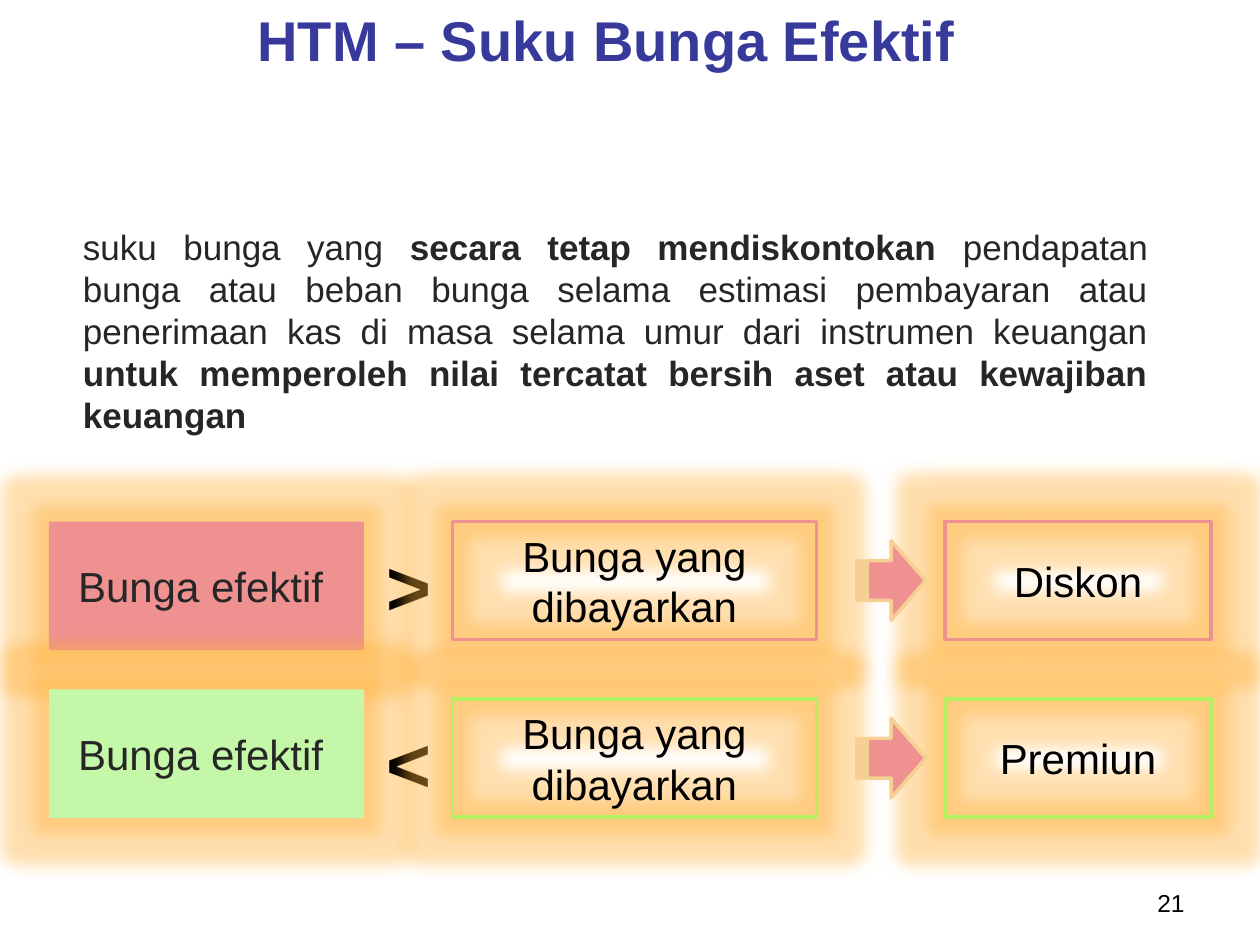
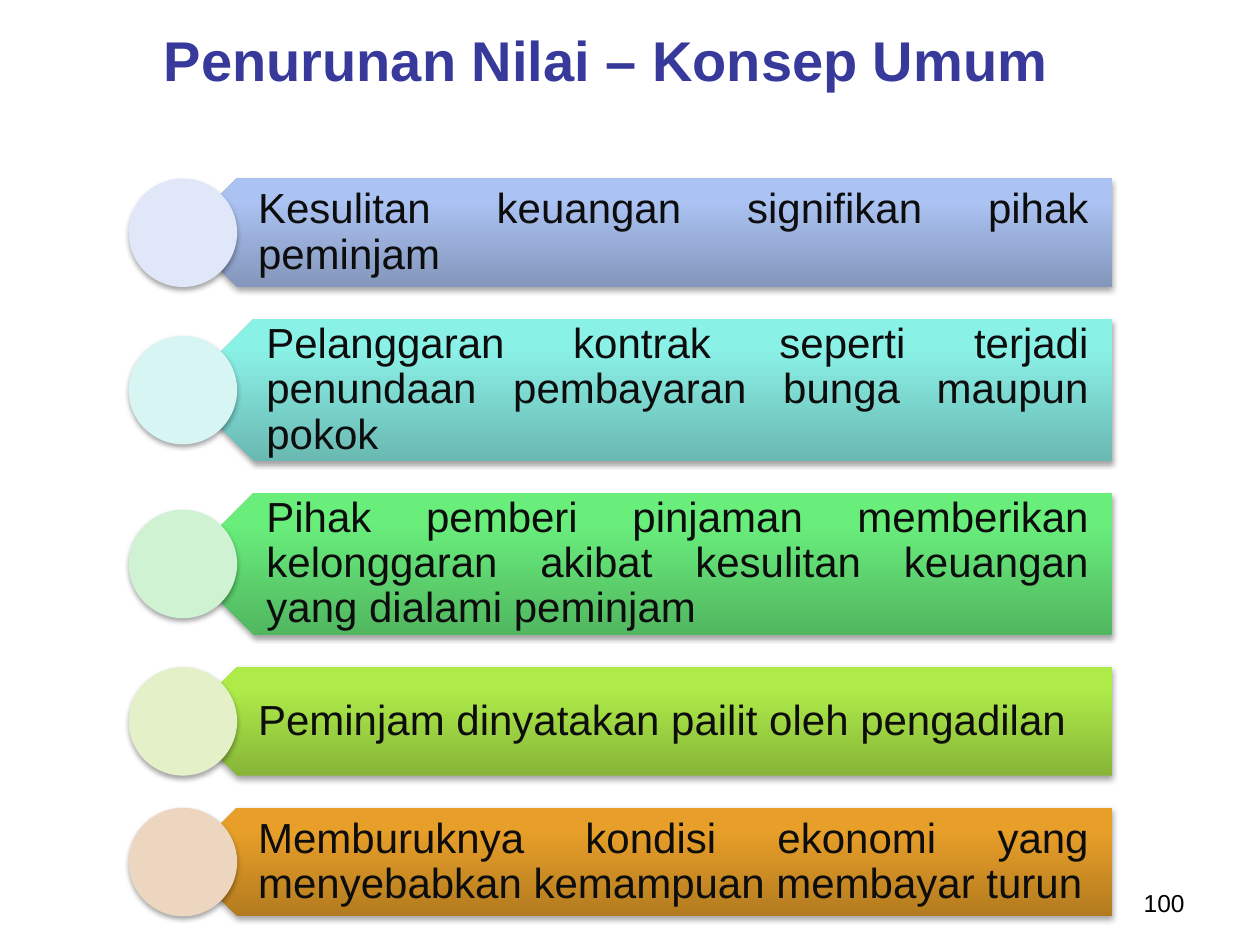
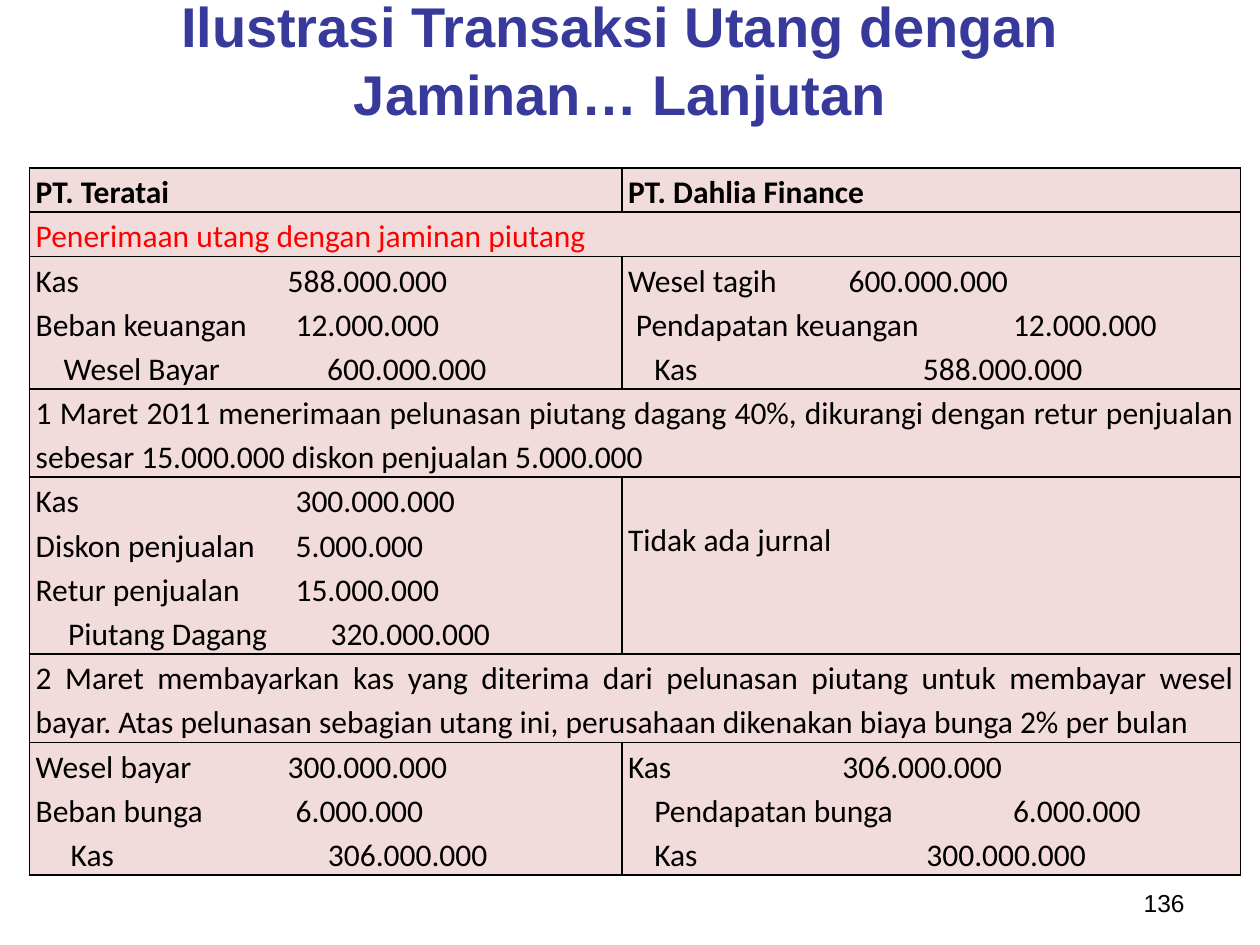
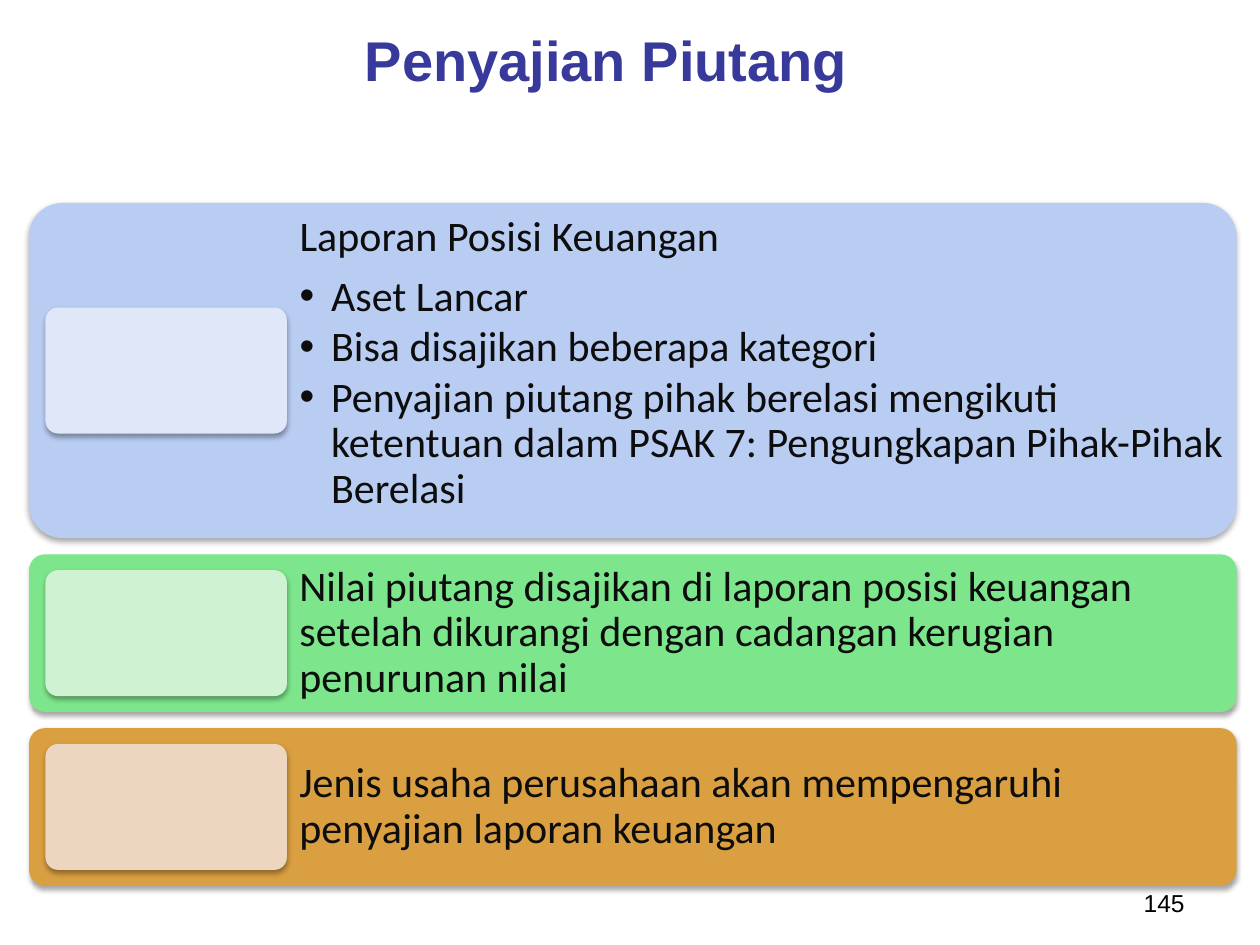
from lxml import etree
from pptx import Presentation
from pptx.dml.color import RGBColor
from pptx.enum import shapes, text
from pptx.oxml import ns
from pptx.util import Pt

INK, SOFT_INK, DARK = "000000", "262626", "0D0D0D"
TITLE_BLUE, ALERT_RED = "37399B", "FF0000"
ROSE, SAND, CELL_PINK, GLOW = "EF9191", "F5D092", "F2DBDB", "FFB139"
CENTER, RIGHT, JUSTIFY = text.PP_ALIGN.CENTER, text.PP_ALIGN.RIGHT, text.PP_ALIGN.JUSTIFY
MIDDLE = text.MSO_ANCHOR.MIDDLE
PRESET = shapes.MSO_SHAPE

DEFINITION = [
    ("suku bunga yang ", False),
    ("secara tetap mendiskontokan ", True),
    ("pendapatan bunga atau beban bunga selama estimasi pembayaran atau "
     "penerimaan kas di masa selama umur dari instrumen keuangan ", False),
    ("untuk memperoleh nilai tercatat bersih aset atau kewajiban keuangan", True),
]
COMPARISONS = [
    dict(sign=">", result="Diskon", fill=ROSE, line=ROSE, effective_top=298, paid_top=298),
    dict(sign="<", result="Premiun", fill="C4F7A7", line="B3F062", effective_top=394, paid_top=399.5),
]

INDICATORS = [
    ("Kesulitan keuangan signifikan pihak peminjam", 62, "8496BB", "ABC3F3", "E0E7F9"),
    ("Pelanggaran kontrak seperti terjadi penundaan pembayaran bunga maupun pokok",
     81, "6AB9B2", "8AF1E7", "D7F6F3"),
    ("Pihak pemberi pinjaman memberikan kelonggaran akibat kesulitan keuangan "
     "yang dialami peminjam", 81, "51B760", "69EE7C", "CFF3D2"),
    ("Peminjam dinyatakan pailit oleh pengadilan", 62, "86B538", "AEEB49", "E4F0C7"),
    ("Memburuknya kondisi ekonomi yang menyebabkan kemampuan membayar turun",
     62, "B37B1F", "E89F29", "EDD6C0"),
]

JOURNAL = [
    (1, ["PT. Teratai"], ["PT. Dahlia Finance"]),
    (1, ["Penerimaan utang dengan jaminan piutang"], None),
    (3,
     [("Kas\t588.000.000", 144),
      ("Beban keuangan\t12.000.000", 148.5),
      ("\tWesel Bayar\t600.000.000", 16, 166.5)],
     [("Wesel tagih\t600.000.000", 126),
      ("\tPendapatan keuangan\t12.000.000", 4.5, 220),
      ("\tKas\t588.000.000", 15, 168.5)]),
    (2, ["1 Maret 2011 menerimaan pelunasan piutang dagang 40%, dikurangi dengan retur "
         "penjualan sebesar 15.000.000 diskon penjualan 5.000.000"], None),
    (4,
     [("Kas\t300.000.000", 148.5),
      ("Diskon penjualan\t5.000.000", 148.5),
      ("Retur penjualan\t15.000.000", 148.5),
      ("\tPiutang Dagang\t320.000.000", 18.5, 168.5)],
     ["Tidak ada jurnal"]),
    (2, ["2 Maret membayarkan kas yang diterima dari pelunasan piutang untuk membayar wesel "
         "bayar. Atas pelunasan sebagian utang ini, perusahaan dikenakan biaya bunga 2% per bulan"],
     None),
    (3,
     [("Wesel bayar\t300.000.000", 144),
      ("Beban bunga\t6.000.000", 148.5),
      ("\tKas\t306.000.000", 20, 167)],
     [("Kas\t306.000.000", 122.5),
      ("\tPendapatan bunga\t6.000.000", 15, 220),
      ("\tKas\t300.000.000", 15, 170.5)]),
]

PRESENTATION = [
    (["Laporan Posisi Keuangan", "Aset Lancar", "Bisa disajikan beberapa kategori",
      "Penyajian piutang pihak berelasi mengikuti ketentuan dalam PSAK 7: "
      "Pengungkapan Pihak-Pihak Berelasi"], 191.5, "B9CCF2", "E0E7F9"),
    (["Nilai piutang disajikan di laporan posisi keuangan setelah dikurangi dengan "
      "cadangan kerugian penurunan nilai"], 90, "7DE68C", "CFF3D2"),
    (["Jenis usaha perusahaan akan mempengaruhi penyajian laporan keuangan"],
     90, "D99F41", "EDD6C0"),
]


def rgb(value):
    return RGBColor.from_string(value)


def child(parent, tag, **attributes):
    element = etree.SubElement(parent, ns.qn("a:" + tag))
    for name, value in attributes.items():
        element.set(name, str(value))
    return element


def write(frame, paragraphs, font="Arial", size=24, color=INK, bold=False, align=None,
          anchor=None, insets=None, spacing=None, bulleted=False):
    frame.word_wrap = True
    if anchor is not None:
        frame.vertical_anchor = anchor
    if insets:
        frame.margin_left, frame.margin_top, frame.margin_right, frame.margin_bottom = map(Pt, insets)
    if isinstance(paragraphs, str):
        paragraphs = [paragraphs]
    for index, content in enumerate(paragraphs):
        paragraph = frame.paragraphs[0] if index == 0 else frame.add_paragraph()
        stops = ()
        if isinstance(content, tuple):
            content, *stops = content
        properties = paragraph._p.get_or_add_pPr()
        if bulleted:
            properties.set("marL", str(Pt(18) if index else 0))
            properties.set("indent", str(-Pt(18) if index else 0))
            if index:
                child(properties, "buFont", typeface="Arial")
                child(properties, "buChar", char="•")
            else:
                child(properties, "buNone")
            paragraph.space_before = Pt(0)
            paragraph.space_after = Pt(3 if index else 8)
        if stops:
            tabs = child(properties, "tabLst")
            for stop in stops:
                child(tabs, "tab", pos=Pt(stop), algn="l")
        paragraph.alignment = align
        if spacing:
            paragraph.line_spacing = spacing
        runs = content if isinstance(content, list) else [(content, bold)]
        for words, strong in runs:
            run = paragraph.add_run()
            run.text = words
            run.font.name, run.font.size, run.font.bold = font, Pt(size), strong
            run.font.color.rgb = rgb(color)


def place(part, box):
    part.left, part.top, part.width, part.height = map(Pt, box)


def label(slide, box, words, **style):
    frame = slide.shapes.add_textbox(*map(Pt, box)).text_frame
    write(frame, words, **style)


def draw(slide, preset, box, fill=None, line=None, effect=None):
    shape = slide.shapes.add_shape(preset, *map(Pt, box))
    shape.shadow.inherit = False
    if fill:
        shape.fill.solid()
        shape.fill.fore_color.rgb = rgb(fill)
    else:
        shape.fill.background()
    if line:
        shape.line.color.rgb, shape.line.width = rgb(line), Pt(2)
    else:
        shape.line.fill.background()
    if effect:
        effects = shape._element.spPr.find(ns.qn("a:effectLst"))
        if effect == "glow":
            halo, tint, alpha = child(effects, "glow", rad=Pt(18)), GLOW, 40
        else:
            halo, tint, alpha = child(effects, "outerShdw", blurRad=Pt(3.1), dist=Pt(1.8),
                                      dir=5400000, rotWithShape=0), INK, 35
        child(child(halo, "srgbClr", val=tint), "alpha", val=alpha * 1000)
    return shape


def start_slide(deck, heading, number, layout=5, top=11.5, width=648):
    slide = deck.slides.add_slide(deck.slide_layouts[layout])
    title = slide.shapes.title
    place(title, (22.5, top, width, 44.5))
    title.text_frame.auto_size = text.MSO_AUTO_SIZE.NONE
    write(title.text_frame, heading, size=32, color=TITLE_BLUE, bold=True,
          align=CENTER, anchor=MIDDLE)
    label(slide, (516, 504, 168, 25), str(number), size=14, align=RIGHT)
    return slide


def effective_rate(deck):
    slide = start_slide(deck, "HTM – Suku Bunga Efektif", 21, top=0)
    definition = draw(slide, PRESET.ROUND_2_DIAG_RECTANGLE, (34, 124, 635.5, 129.5))
    write(definition.text_frame, [DEFINITION], size=20, color=SOFT_INK, align=JUSTIFY, anchor=MIDDLE)
    for row in COMPARISONS:
        top = row["paid_top"]
        effective = draw(slide, PRESET.RECTANGLE, (28, row["effective_top"], 180, 73.5),
                         fill=row["fill"], effect="glow")
        write(effective.text_frame, "Bunga efektif ", color=SOFT_INK, align=CENTER, anchor=MIDDLE)
        label(slide, (214, top + 6, 39.5, 60.5), row["sign"], size=44, bold=True)
        for left, width, words in ((258.5, 208, "Bunga yang dibayarkan"), (540, 152, row["result"])):
            outcome = draw(slide, PRESET.RECTANGLE, (left, top, width, 67.5),
                           line=row["line"], effect="glow")
            write(outcome.text_frame, words, align=CENTER, anchor=MIDDLE)
        draw(slide, PRESET.STRIPED_RIGHT_ARROW, (489.5, top + 11, 39.5, 45.5), fill=ROSE, line=SAND)


def impairment(deck):
    slide = start_slide(deck, "Penurunan Nilai – Konsep Umum", 100)
    left, right, top, circle, gap = 104.5, 635.5, 102, 62, 18.4
    for words, height, dark, light, pale in INDICATORS:
        banner = draw(slide, PRESET.PENTAGON, (left, top, right - left, height), effect="shadow")
        banner._element.spPr.xfrm.set("flipH", "1")
        banner.fill.gradient()
        banner.fill.gradient_angle = 90
        low, high = banner.fill.gradient_stops
        low.color.rgb, high.color.rgb = rgb(dark), rgb(light)
        low.position, high.position = 0, 0.8
        text_left = left + height / 4
        label(slide, (text_left, top, right - text_left, height), words, color=DARK,
              align=JUSTIFY, anchor=MIDDLE, insets=(27.5, 7, 13.5, 7), spacing=0.9)
        draw(slide, PRESET.OVAL, (73.5, top + (height - circle) / 2, circle, circle),
             fill=pale, effect="shadow")
        top += height + gap


def style_cell(cell):
    cell.margin_left = cell.margin_right = Pt(3.6)
    cell.margin_top = cell.margin_bottom = 0
    properties = cell._tc.get_or_add_tcPr()
    for side in "LRTB":
        border = child(properties, "ln" + side, w=Pt(1))
        child(child(border, "solidFill"), "srgbClr", val=INK)
    cell.fill.solid()
    cell.fill.fore_color.rgb = rgb(CELL_PINK)


def secured_debt(deck):
    slide = start_slide(deck, "Ilustrasi Transaksi Utang dengan Jaminan… Lanjutan", 136, width=664)
    line_height = 25.25
    height = line_height * sum(row[0] for row in JOURNAL)
    journal = slide.shapes.add_table(len(JOURNAL), 2, *map(Pt, (16.8, 96, 692, height))).table
    journal.first_row = journal.horz_banding = False
    for column, width in zip(journal.columns, (338.5, 353.5)):
        column.width = Pt(width)
    for index, (lines, *entries) in enumerate(JOURNAL):
        journal.rows[index].height = Pt(lines * line_height)
        for column, entry in enumerate(entries):
            cell = journal.cell(index, column)
            style_cell(cell)
            if entry:
                write(cell.text_frame, entry, font="Calibri", size=18, bold=index == 0,
                      color=ALERT_RED if index == 1 else INK, align=JUSTIFY, spacing=1.15)
                if entry == ["Tidak ada jurnal"]:
                    cell.margin_top = Pt(22)
        if entries[1] is None:
            journal.cell(index, 0).merge(journal.cell(index, 1))


def receivables(deck):
    slide = start_slide(deck, "Penyajian Piutang", 145, layout=1)
    report = slide.placeholders[1]
    top, gap, tile = 116, 9.3, 72
    style = dict(font="Calibri", color=DARK, insets=(7.2,) * 4, spacing=0.9)
    for points, height, fill, pale in PRESENTATION:
        for box, tint in (((16.6, top, 690, height), fill),
                          ((26, top + (height - tile) / 2, 138, tile), pale)):
            draw(slide, PRESET.ROUNDED_RECTANGLE, box, fill=tint, effect="shadow").adjustments[0] = 0.1
        box = (164, top, 543, height)
        if len(points) > 1:
            place(report, box)
            report.text_frame.auto_size = text.MSO_AUTO_SIZE.NONE
            write(report.text_frame, points, bulleted=True, **style)
            slide.shapes._spTree.append(report._element)
        else:
            label(slide, box, points, anchor=MIDDLE, **style)
        top += height + gap


def main():
    deck = Presentation()
    deck.slide_width, deck.slide_height = Pt(720), Pt(540)
    for build in (effective_rate, impairment, secured_debt, receivables):
        build(deck)
    deck.save("out.pptx")


if __name__ == "__main__":
    main()
